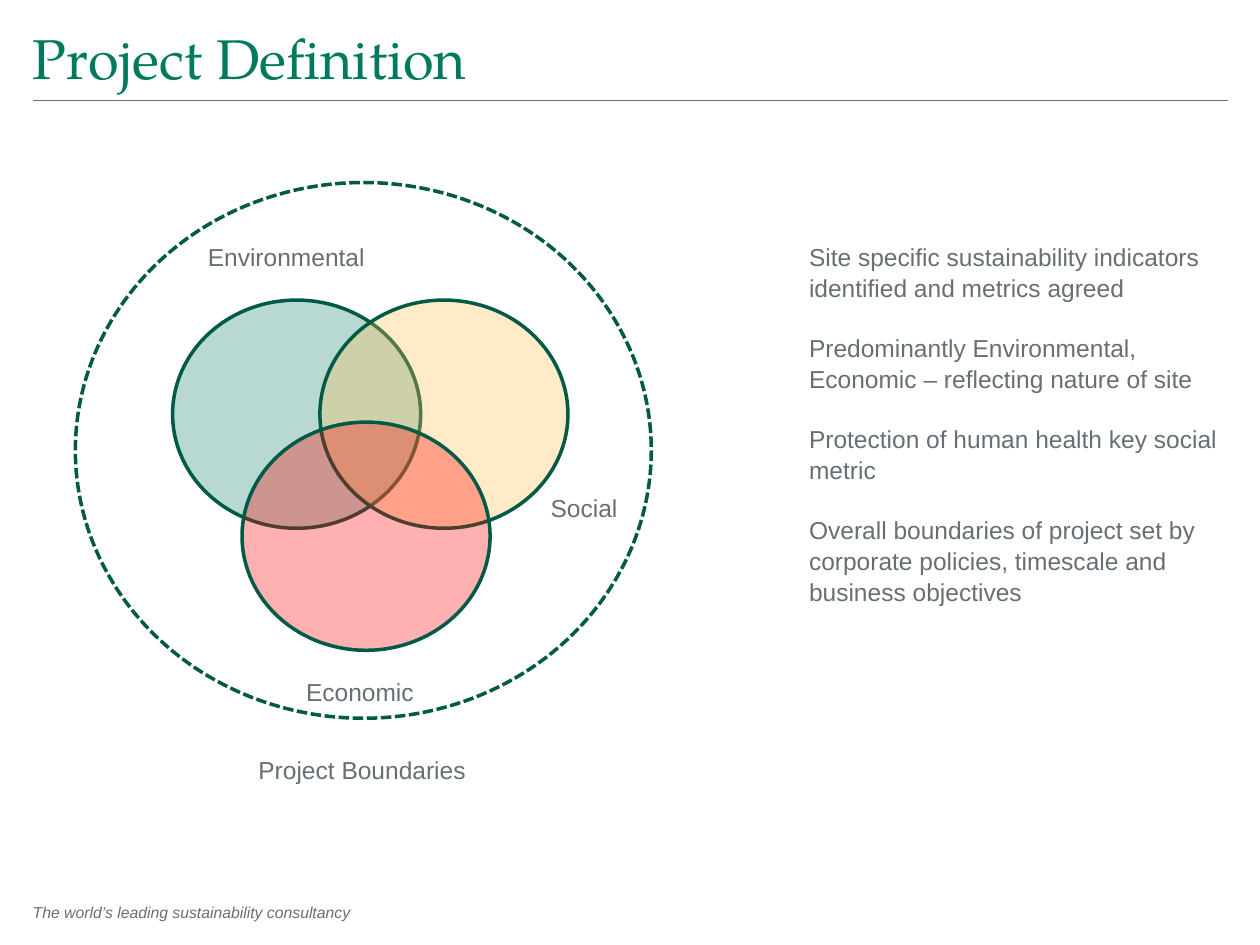
"""Build the Project Definition slide with its sustainability Venn diagram."""
from dataclasses import dataclass
from typing import Optional

from lxml.etree import SubElement
from pptx import Presentation
from pptx.dml.color import RGBColor
from pptx.enum.dml import MSO_LINE
from pptx.enum.shapes import MSO_CONNECTOR as Connector, MSO_SHAPE as Shape
from pptx.enum.text import MSO_ANCHOR as Anchor, PP_ALIGN as Align
from pptx.oxml.ns import qn
from pptx.slide import Slide
from pptx.text.text import TextFrame
from pptx.util import Cm, Pt


@dataclass(frozen=True)
class Theme:
    """Colours, fonts and type sizes of the slide."""
    green: str = "007A5F"
    dark_green: str = "005A46"
    amber: str = "FFBF4B"
    red: str = "FF0000"
    grey: str = "666F74"
    heading_font: str = "TeX Gyre Pagella"
    body_font: str = "Arial"
    title_size: float = 32
    body_size: float = 14
    footer_size: float = 9
    outline: float = 2
    rule: float = 0.5


@dataclass(frozen=True)
class Oval:
    """An outlined ellipse, in centimetres, with an optional tint."""
    left: float
    top: float
    width: float = 5.0
    height: float = 4.6
    fill: Optional[str] = None
    opacity: int = 100
    dashed: bool = False


@dataclass(frozen=True)
class Caption:
    """Paragraphs of text in a box, in centimetres."""
    paragraphs: tuple[str, ...]
    left: float
    top: float
    width: float
    height: float = 0.86
    size: float = Theme.body_size
    italic: bool = False
    wrap: bool = False
    line_spacing: float = 1.05


THEME = Theme()
MARGIN, CONTENT_WIDTH = 0.66, 24.1
CIRCLE_TOP = 6.05

OVALS = (
    Oval(1.52, 3.68, 11.61, 10.8, dashed=True),
    Oval(3.48, CIRCLE_TOP, fill=THEME.green, opacity=28),
    Oval(6.45, CIRCLE_TOP, fill=THEME.amber, opacity=31),
    Oval(4.88, 8.51, fill=THEME.red, opacity=31),
)

CAPTIONS = (
    Caption(("Environmental",), 4.19, 4.72, 3.18),
    Caption(("Social",), 11.1, 9.78, 1.35),
    Caption(("Economic",), 6.17, 13.49, 2.29),
    Caption(("Project Boundaries",), 5.21, 15.06, 4.19),
    Caption((
        "Site specific sustainability indicators identified and metrics agreed",
        "Predominantly Environmental, Economic – reflecting nature of site",
        "Protection of human health key social metric",
        "Overall boundaries of project set by corporate policies, timescale and business objectives",
    ), 16.31, 4.72, 8.61, 7.44, wrap=True),
    Caption(("The world’s leading sustainability consultancy",), MARGIN, 18.06, 12.47, 0.63,
            size=THEME.footer_size, italic=True, wrap=True, line_spacing=1.0),
)


def rgb(colour: str) -> RGBColor:
    """Return the colour for a hex string."""
    return RGBColor.from_string(colour)


def set_insets(frame: TextFrame, top: float, bottom: float) -> None:
    """Remove the side insets and set those above and below."""
    frame.margin_left = frame.margin_right = Cm(0)
    frame.margin_top, frame.margin_bottom = Cm(top), Cm(bottom)


def add_title(slide: Slide, wording: str) -> None:
    """Place and format the title placeholder."""
    title = slide.shapes.title
    title.left, title.top = Cm(MARGIN), Cm(0.46)
    title.width, title.height = Cm(CONTENT_WIDTH), Cm(1.52)
    frame = title.text_frame
    set_insets(frame, 0, 0.13)
    frame.word_wrap = True
    frame.vertical_anchor = Anchor.MIDDLE
    paragraph = frame.paragraphs[0]
    paragraph.alignment = Align.LEFT
    run = paragraph.add_run()
    run.text = wording
    run.font.name, run.font.size = THEME.heading_font, Pt(THEME.title_size)
    run.font.color.rgb = rgb(THEME.green)


def add_rule(slide: Slide) -> None:
    """Draw the thin rule under the title."""
    rule = slide.shapes.add_connector(
        Connector.STRAIGHT, Cm(MARGIN), Cm(2.03), Cm(MARGIN + CONTENT_WIDTH), Cm(2.03))
    rule.line.color.rgb = rgb(THEME.grey)
    rule.line.width = Pt(THEME.rule)
    SubElement(rule._element.spPr, qn("a:effectLst"))


def add_oval(slide: Slide, oval: Oval) -> None:
    """Draw one ellipse of the diagram."""
    ellipse = slide.shapes.add_shape(
        Shape.OVAL, Cm(oval.left), Cm(oval.top), Cm(oval.width), Cm(oval.height))
    ellipse.shadow.inherit = False
    ellipse.line.color.rgb = rgb(THEME.dark_green)
    ellipse.line.width = Pt(THEME.outline)
    if oval.dashed:
        ellipse.line.dash_style = MSO_LINE.SQUARE_DOT
    if oval.fill is None:
        ellipse.fill.background()
        return
    ellipse.fill.solid()
    ellipse.fill.fore_color.rgb = rgb(oval.fill)
    tint = ellipse._element.spPr.find(qn("a:solidFill")).find(qn("a:srgbClr"))
    SubElement(tint, qn("a:alpha"), val=str(oval.opacity * 1000))


def add_caption(slide: Slide, caption: Caption) -> None:
    """Write one text box, leaving a line's gap between its paragraphs."""
    box = slide.shapes.add_textbox(
        Cm(caption.left), Cm(caption.top), Cm(caption.width), Cm(caption.height))
    frame = box.text_frame
    set_insets(frame, 0.13, 0.13)
    frame.word_wrap = caption.wrap
    for index, wording in enumerate(caption.paragraphs):
        paragraph = frame.add_paragraph() if index else frame.paragraphs[0]
        paragraph.line_spacing = caption.line_spacing
        if index:
            paragraph.space_before = Pt(caption.size * 1.2)
        run = paragraph.add_run()
        run.text = wording
        run.font.name, run.font.size = THEME.body_font, Pt(caption.size)
        run.font.italic = caption.italic
        run.font.color.rgb = rgb(THEME.grey)


def main() -> None:
    """Assemble and save the slide."""
    deck = Presentation()
    deck.slide_width, deck.slide_height = Cm(25.4), Cm(19.05)
    slide = deck.slides.add_slide(deck.slide_layouts[5])
    add_title(slide, "Project Definition")
    add_rule(slide)
    for oval in OVALS:
        add_oval(slide, oval)
    for caption in CAPTIONS:
        add_caption(slide, caption)
    deck.save("out.pptx")


if __name__ == "__main__":
    main()
